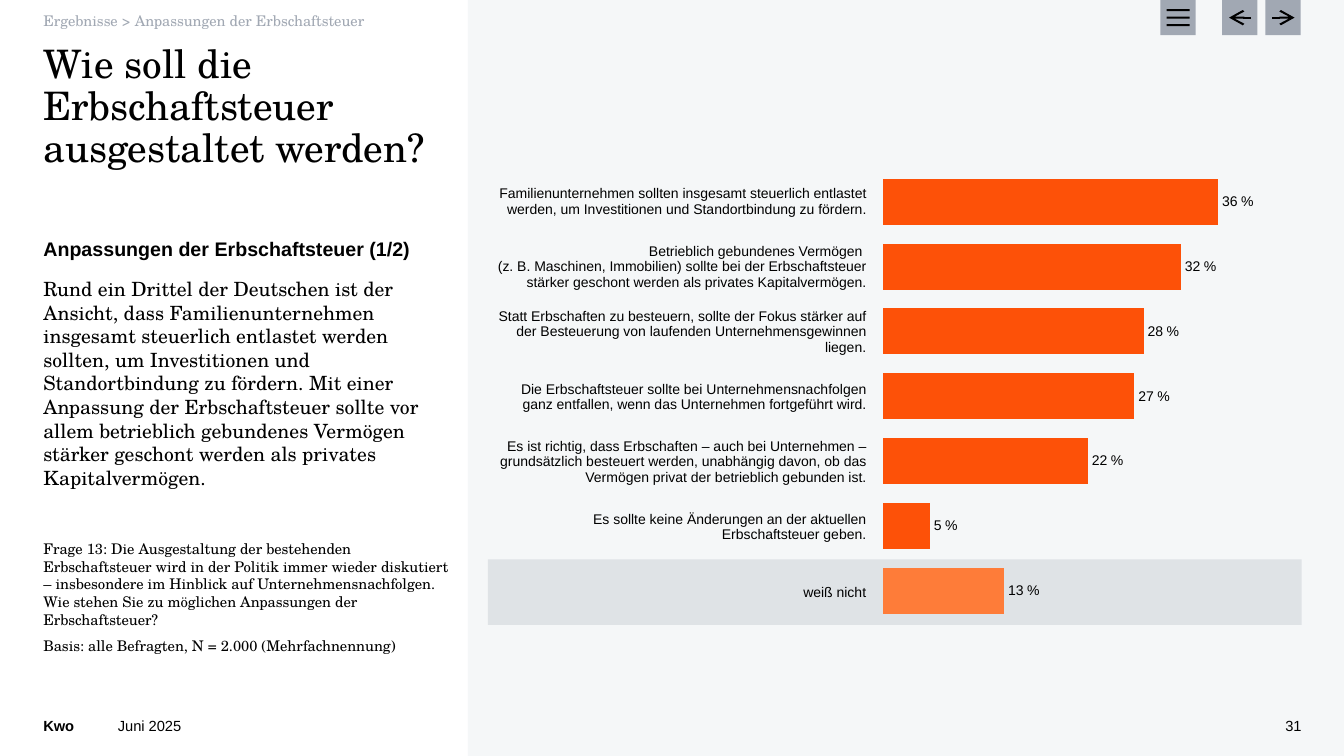
from dataclasses import dataclass
from lxml import etree
from pptx import Presentation
from pptx.chart.data import CategoryChartData
from pptx.dml.color import RGBColor
from pptx.enum.chart import XL_CHART_TYPE, XL_LABEL_POSITION
from pptx.enum.shapes import MSO_CONNECTOR, MSO_SHAPE
from pptx.enum.text import MSO_ANCHOR, PP_ALIGN
from pptx.oxml.ns import qn
from pptx.util import Inches, Pt

RECTANGLE = MSO_SHAPE.RECTANGLE
STRAIGHT = MSO_CONNECTOR.STRAIGHT
BAR = XL_CHART_TYPE.BAR_CLUSTERED
OUTSIDE = XL_LABEL_POSITION.OUTSIDE_END
TOP, MIDDLE, BOTTOM = MSO_ANCHOR.TOP, MSO_ANCHOR.MIDDLE, MSO_ANCHOR.BOTTOM
LEFT, RIGHT = PP_ALIGN.LEFT, PP_ALIGN.RIGHT

# Content
BREADCRUMB = "Ergebnisse > Anpassungen der Erbschaftsteuer"
TITLE = "Wie soll die Erbschaftsteuer ausgestaltet werden?"
HEADING = "Anpassungen der Erbschaftsteuer (1/2)"
FINDING = (
    "Rund ein Drittel der Deutschen ist der Ansicht, dass Familienunternehmen "
    "insgesamt steuerlich entlastet werden sollten, um Investitionen und "
    "Standortbindung zu fördern. Mit einer Anpassung der Erbschaftsteuer sollte "
    "vor allem betrieblich gebundenes Vermögen stärker geschont werden als "
    "privates Kapitalvermögen."
)
QUESTION = (
    "Frage 13: Die Ausgestaltung der bestehenden Erbschaftsteuer wird in der "
    "Politik immer wieder diskutiert – insbesondere im Hinblick auf "
    "Unternehmensnachfolgen. Wie stehen Sie zu möglichen Anpassungen der "
    "Erbschaftsteuer?"
)
BASIS = "Basis: alle Befragten, N = 2.000 (Mehrfachnennung)"
COMPANY, DATE, PAGE_NUMBER = "Kwo", "Juni 2025", "31"
ANSWERS = [
    ("Familienunternehmen sollten insgesamt steuerlich entlastet werden, "
     "um Investitionen und Standortbindung zu fördern.", 0.36),
    ("Betrieblich gebundenes Vermögen \v(z. B. Maschinen, Immobilien) sollte bei "
     "der Erbschaftsteuer stärker geschont werden als privates Kapitalvermögen.", 0.32),
    ("Statt Erbschaften zu besteuern, sollte der Fokus stärker auf der "
     "Besteuerung von laufenden Unternehmensgewinnen liegen.", 0.28),
    ("Die Erbschaftsteuer sollte bei Unternehmensnachfolgen\v"
     "ganz entfallen, wenn das Unternehmen fortgeführt wird.", 0.27),
    ("Es ist richtig, dass Erbschaften – auch bei Unternehmen – grundsätzlich "
     "besteuert werden, unabhängig davon, ob das Vermögen privat der "
     "betrieblich gebunden ist.", 0.22),
    ("Es sollte keine Änderungen an der aktuellen\vErbschaftsteuer geben.", 0.05),
    ("weiß nicht", 0.13),
]


@dataclass(frozen=True)
class Theme:
    serif: str = "TeX Gyre Schola"
    sans: str = "Arial"
    ink: str = "000000"
    muted: str = "A1A8B3"
    panel: str = "F5F7F8"
    band: str = "DFE3E6"
    bar: str = "FD5108"
    bar_unsure: str = "FE7C39"
    title: float = 28
    body: float = 14
    small: float = 10.5
    label: float = 10


THEME = Theme()

# Grid in inches
WIDTH, HEIGHT = 13.33, 7.5
MARGIN = 0.43
TEXT_WIDTH = 4.08
PANEL_LEFT = 4.64
RIGHT_EDGE = 12.91
TABLE_LEFT, TABLE_WIDTH = 4.81, 3.82
HEAD_ROWS = [0.19, 0.34, 0.23]
ROWS_TOP, ROW_HEIGHT = 1.68, 4.52 / len(ANSWERS)
FOOTER_TOP, FOOTER_HEIGHT = 7.11, 0.18
BUTTON = 0.35
MENU_LEFT, BACK_LEFT, NEXT_LEFT = 11.51, 12.12, 12.55

deck = Presentation()
deck.slide_width, deck.slide_height = Inches(WIDTH), Inches(HEIGHT)
page = deck.slides.add_slide(deck.slide_layouts[6])


def rgb(code):
    return RGBColor.from_string(code)


def style(font, size, family, color=THEME.ink, bold=False):
    font.size, font.name, font.bold = Pt(size), family, bold
    font.color.rgb = rgb(color)


def add_rect(left, top, width, height, color):
    rect = page.shapes.add_shape(RECTANGLE, *map(Inches, (left, top, width, height)))
    rect.shadow.inherit = False
    rect.fill.solid()
    rect.fill.fore_color.rgb = rgb(color)
    rect.line.fill.background()


def add_text(area, lines, anchor=TOP, align=LEFT, spacing=None, before=0, after=0):
    """Each line is (text, size, family, color, bold)."""
    frame = page.shapes.add_textbox(*map(Inches, area)).text_frame
    frame.word_wrap = True
    frame.vertical_anchor = anchor
    frame.margin_left = frame.margin_right = frame.margin_top = frame.margin_bottom = 0
    for index, (text, *look) in enumerate(lines):
        para = frame.add_paragraph() if index else frame.paragraphs[0]
        para.text = text
        para.alignment = align
        if spacing:
            para.line_spacing = spacing
        if index:
            para.space_before = Pt(before)
        elif after:
            para.space_after = Pt(after)
        style(para.runs[0].font, *look)


def add_arrow(start, end):
    middle = Inches(BUTTON / 2)
    arrow = page.shapes.add_connector(STRAIGHT, Inches(start), middle, Inches(end), middle)
    arrow.line.width = Pt(1.5)
    arrow.line.color.rgb = rgb(THEME.ink)
    etree.SubElement(arrow.line._get_or_add_ln(), qn("a:tailEnd"),
                     type="arrow", w="lg", len="lg")
    etree.SubElement(arrow._element.spPr, qn("a:effectLst"))


# Panel and highlighted last row
add_rect(PANEL_LEFT, 0, WIDTH - PANEL_LEFT, HEIGHT, THEME.panel)
add_rect(4.84, 5.55, RIGHT_EDGE - 4.84, 0.65, THEME.band)

# Left column
add_text((MARGIN, 0.08, TEXT_WIDTH, 0.28),
         [(BREADCRUMB, THEME.small, THEME.serif, THEME.muted)], MIDDLE, spacing=0.9)
add_text((MARGIN, 0.44, TEXT_WIDTH, 0.98),
         [(TITLE, THEME.title, THEME.serif)], spacing=0.9)
add_text((MARGIN, 2.35, TEXT_WIDTH, 2.67),
         [(HEADING, THEME.body, THEME.sans, THEME.ink, True),
          (FINDING, THEME.body, THEME.serif)], before=6, after=6)
add_text((MARGIN, 4.35, TEXT_WIDTH, 2.14),
         [(text, THEME.small, THEME.serif) for text in (QUESTION, BASIS)],
         BOTTOM, before=6)

# Footer
add_text((MARGIN, FOOTER_TOP, 0.47, FOOTER_HEIGHT),
         [(COMPANY, THEME.small, THEME.sans, THEME.ink, True)])
add_text((1.17, FOOTER_TOP, 9.64, FOOTER_HEIGHT),
         [(DATE, THEME.small, THEME.sans)], BOTTOM)
add_text((RIGHT_EDGE - 0.33, FOOTER_TOP, 0.33, FOOTER_HEIGHT),
         [(PAGE_NUMBER, THEME.small, THEME.sans)], BOTTOM, RIGHT)

# Bar chart
data = CategoryChartData()
data.categories = [str(number + 1) for number in range(len(ANSWERS))]
data.add_series("Series 1", [value for _, value in ANSWERS])
chart = page.shapes.add_chart(BAR, *map(Inches, (4.83, ROWS_TOP, 7.77, 4.51)), data).chart
chart.has_legend = chart.has_title = False
style(chart.font, 18, THEME.sans)
chart.category_axis.visible = chart.value_axis.visible = False
chart.category_axis.reverse_order = True
chart.value_axis.has_major_gridlines = False
chart.value_axis.minimum_scale, chart.value_axis.maximum_scale = 0, 0.4
plot = chart.plots[0]
plot.gap_width, plot.vary_by_categories = 41, False
series = plot.series[0]
for target, color in ((series, THEME.bar), (series.points[len(ANSWERS) - 1], THEME.bar_unsure)):
    target.format.fill.solid()
    target.format.fill.fore_color.rgb = rgb(color)
labels = series.data_labels
labels.show_value, labels.position = True, OUTSIDE
labels.number_format, labels.number_format_is_linked = "0\\ %", False
style(labels.font, THEME.label, THEME.sans)

# Fixed plot area, so that bars line up with the table rows
plot_area = chart._chartSpace.chart.plotArea
for old_layout in plot_area.findall(qn("c:layout")):
    plot_area.remove(old_layout)
layout = etree.Element(qn("c:layout"))
plot_area.insert(0, layout)
manual = etree.SubElement(layout, qn("c:manualLayout"))
for tag, value in (("layoutTarget", "inner"), ("xMode", "edge"), ("yMode", "edge"),
                   ("x", 0.506), ("y", 0), ("w", 0.475), ("h", 0.999)):
    etree.SubElement(manual, qn("c:" + tag), val=str(value))

# Answer table, with empty head rows above the answers
heights = HEAD_ROWS + [ROW_HEIGHT] * len(ANSWERS)
answers = [""] * len(HEAD_ROWS) + [answer for answer, _ in ANSWERS]
table = page.shapes.add_table(
    len(heights), 1, Inches(TABLE_LEFT), Inches(ROWS_TOP - sum(HEAD_ROWS)),
    Inches(TABLE_WIDTH), Inches(sum(heights))).table
table.first_row = table.horz_banding = False
NO_STYLE_NO_GRID = "{2D5ABB26-0587-4C30-8999-92F81FD0307C}"
table._tbl.tblPr.find(qn("a:tableStyleId")).text = NO_STYLE_NO_GRID
for row, (answer, height) in enumerate(zip(answers, heights)):
    table.rows[row].height = Inches(height)
    cell = table.cell(row, 0)
    cell.fill.background()
    cell.vertical_anchor = MIDDLE
    cell.margin_left = cell.margin_top = cell.margin_bottom = 0
    cell.margin_right = Inches(0.04)
    para = cell.text_frame.paragraphs[0]
    para.text = answer
    para.alignment = RIGHT
    for span in para.runs:
        style(span.font, THEME.label, THEME.sans)
    if not answer:
        etree.SubElement(para._p, qn("a:endParaRPr"), sz=str(THEME.label * 100))

# Navigation buttons
for left in (MENU_LEFT, BACK_LEFT, NEXT_LEFT):
    add_rect(left, 0, BUTTON, BUTTON, THEME.muted)
for bar in range(3):
    add_rect(MENU_LEFT + 0.06, 0.09 + 0.075 * bar, 0.23, 0.02, THEME.ink)
add_arrow(BACK_LEFT + 0.29, BACK_LEFT + 0.07)
add_arrow(NEXT_LEFT + 0.07, NEXT_LEFT + 0.29)

deck.save("out.pptx")
